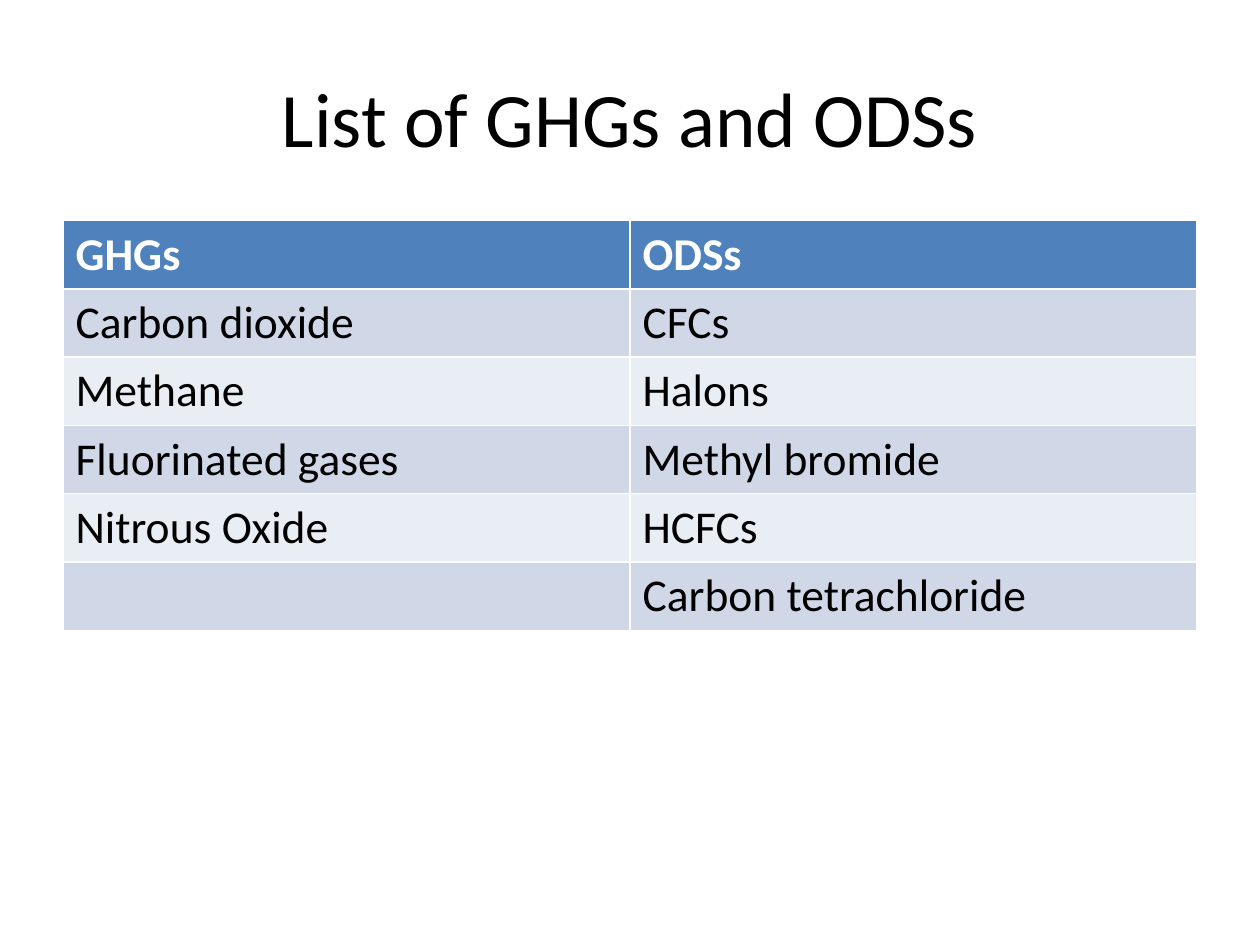
from pptx import Presentation
from pptx.dml.color import RGBColor
from pptx.enum.text import MSO_ANCHOR, PP_ALIGN
from pptx.util import Inches, Pt

BLACK = RGBColor(0x00, 0x00, 0x00)
WHITE = RGBColor(0xFF, 0xFF, 0xFF)
HEADER_BLUE = RGBColor(0x4F, 0x81, 0xBD)
BANDS = RGBColor(0xD0, 0xD8, 0xE8), RGBColor(0xE9, 0xED, 0xF4)

TITLE_FONT = {"name": "Calibri", "size": Pt(44), "bold": False}
HEADER_FONT = {"name": "Calibri", "size": Pt(26), "bold": True}
BODY_FONT = {**HEADER_FONT, "bold": False}

GASES = [
    ("GHGs", "ODSs"),
    ("Carbon dioxide", "CFCs"),
    ("Methane", "Halons"),
    ("Fluorinated gases", "Methyl bromide"),
    ("Nitrous Oxide", "HCFCs"),
    ("", "Carbon tetrachloride"),
]


def write(p, text, font, color):
    """Add a formatted run to a paragraph."""
    r = p.add_run()
    r.text = text
    for name, value in font.items():
        setattr(r.font, name, value)
    r.font.color.rgb = color


def add_title(slide, text, left, top, width, height):
    """Place the title placeholder in the given box."""
    sp = slide.shapes.title
    box = {"left": left, "top": top, "width": width, "height": height}
    for name, value in box.items():
        setattr(sp, name, value)
    tf = sp.text_frame
    tf.vertical_anchor = MSO_ANCHOR.MIDDLE
    p = tf.paragraphs[0]
    p.alignment = PP_ALIGN.CENTER
    write(p, text, TITLE_FONT, BLACK)


def add_gas_table(slide, rows, left, top, width, height):
    """Fill the given box with a header row and banded rows."""
    frame = slide.shapes.add_table(len(rows), len(rows[0]), left, top, width, height)
    for i, row in enumerate(rows):
        fill = BANDS[(i - 1) % 2] if i else HEADER_BLUE
        font, color = (BODY_FONT, BLACK) if i else (HEADER_FONT, WHITE)
        for j, text in enumerate(row):
            cell = frame.table.cell(i, j)
            cell.fill.solid()
            cell.fill.fore_color.rgb = fill
            if text:
                write(cell.text_frame.paragraphs[0], text, font, color)


def main():
    """Build and save the slide."""
    prs = Presentation()
    prs.slide_width, prs.slide_height = Inches(10), Inches(7.5)
    slide = prs.slides.add_slide(prs.slide_layouts[5])
    left, width = Inches(0.5), Inches(9)
    add_title(slide, "List of GHGs and ODSs", left, Inches(0.3), width, Inches(1.25))
    add_gas_table(slide, GASES, left, Inches(1.75), width, Inches(3.24))
    prs.save("out.pptx")


if __name__ == "__main__":
    main()
